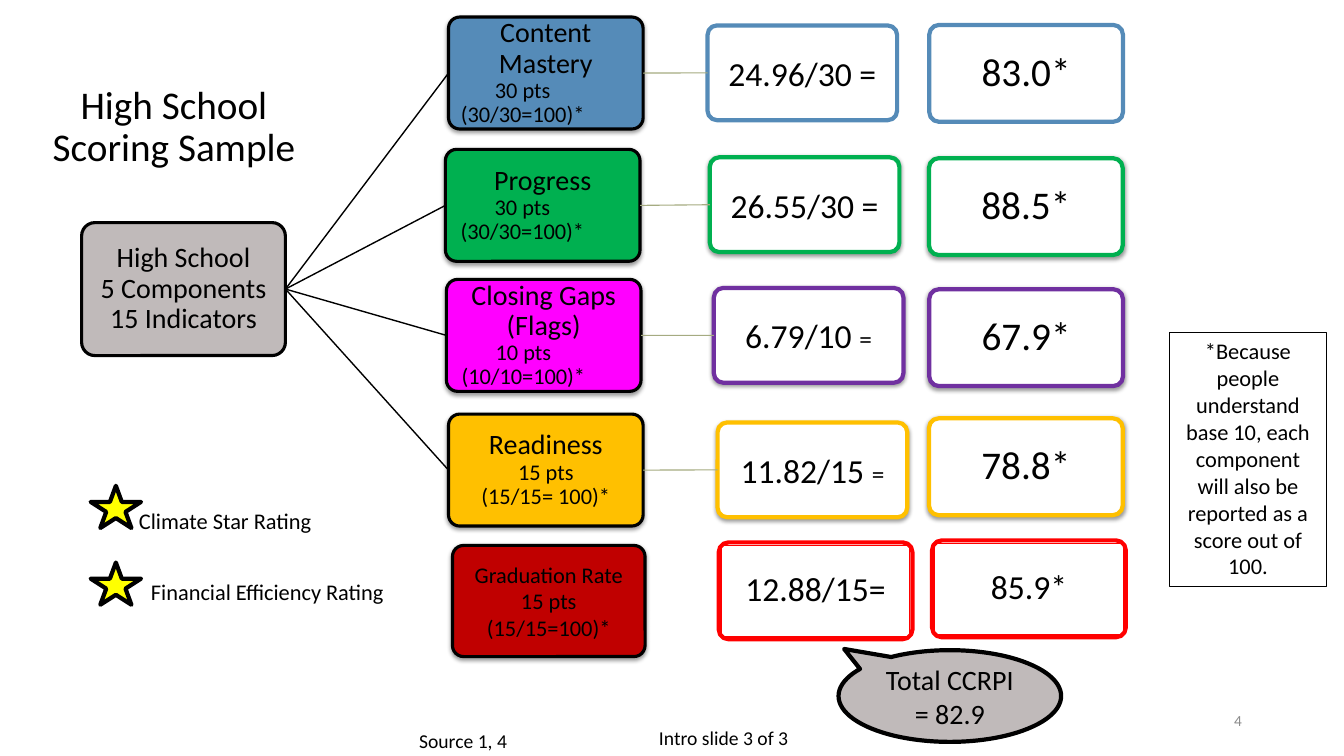
from pptx import Presentation
from pptx import util as u
from pptx.dml import color
from pptx.enum import shapes, text
from pptx.oxml import ns, parse_xml

Pt = u.Pt
FORM = shapes.MSO_SHAPE
MID, TOP = text.MSO_ANCHOR.MIDDLE, text.MSO_ANCHOR.TOP
LEFT, MIDDLE, RIGHT = text.PP_ALIGN.LEFT, text.PP_ALIGN.CENTER, text.PP_ALIGN.RIGHT
SHADE = (
    f'<a:effectLst {ns.nsdecls("a")}><a:outerShdw blurRad="38100" dist="17780" '
    'dir="5400000" rotWithShape="0"><a:srgbClr val="000000"><a:alpha val="40000"/>'
    '</a:srgbClr></a:outerShdw></a:effectLst>'
)
ROWS = [
    dict(top=12.2, fill="558BB8", edge="558BB8", gap=33, shade=False,
         head="Content\vMastery", worth="30 pts", scale="(30/30=100)*",
         points="24.96/30 ", equal=24, score="83.0*",
         card=320.4, mark=(505.4, 18.2), total=(663.8, 17.8)),
    dict(top=106.7, fill="00B050", edge="00B050", gap=29, shade=True,
         head="Progress", worth="30 pts", scale="(30/30=100)*",
         points="26.55/30 ", equal=24, score="88.5*",
         card=318.2, mark=(507, 112.4), total=(663.6, 113)),
    dict(top=199.6, fill="FF00FF", edge="7030A0", gap=29, shade=True,
         head="Closing Gaps\v(Flags)", worth="10 pts", scale="(10/10=100)*",
         points="6.79/10 ", equal=18, score="67.9*",
         card=318.9, mark=(509.9, 205.7), total=(663.8, 206.6)),
    dict(top=295.8, fill="FFC000", edge="FFC000", gap=0, shade=True,
         head="Readiness", worth="15 pts", scale="(15/15= 100)*",
         points="11.82/15 ", equal=18, score="78.8*",
         card=320.4, mark=(512.6, 301.8), total=(663.6, 298.8)),
]


def rgb(code):
    """Turn a hex string into a colour."""
    return color.RGBColor.from_string(code)


def write(shape, lines, align=MIDDLE, anchor=MID, inset=2, space=1.0, ink="000000"):
    """Fill a shape with lines of (text, size)."""
    frame = shape.text_frame
    frame.word_wrap = True
    frame.vertical_anchor = anchor
    frame.margin_left = frame.margin_right = Pt(inset)
    frame.margin_top = frame.margin_bottom = Pt(inset / 2)
    for spot, (words, size) in enumerate(lines):
        para = frame.add_paragraph() if spot else frame.paragraphs[0]
        para.text = words
        para.alignment, para.line_spacing = align, space
        para.font.name, para.font.size = "Calibri", Pt(size)
        para.font.color.rgb = rgb(ink)
    return frame.paragraphs


def label(slide, box, lines, **style):
    """Place plain text in a box."""
    shape = slide.shapes.add_textbox(*map(Pt, box))
    return write(shape, lines, **{"inset": 7.2, **style})


def block(slide, form, box, fill=None, edge="000000", width=3, shade=False):
    """Place a filled and outlined shape in a box."""
    shape = slide.shapes.add_shape(form, *map(Pt, box))
    shape.shadow.inherit = False
    if shade:
        props = shape.element.spPr
        props.replace(props.find(ns.qn("a:effectLst")), parse_xml(SHADE))
    if fill:
        shape.fill.solid()
        shape.fill.fore_color.rgb = rgb(fill)
    else:
        shape.fill.background()
    shape.line.color.rgb = rgb(edge)
    shape.line.width = Pt(width)
    if form == FORM.ROUNDED_RECTANGLE:
        shape.adjustments[0] = 0.1
    return shape


def join(slide, start, end, ink, width):
    """Link the right side of one box to the left side of the next."""
    line = slide.shapes.add_connector(shapes.MSO_CONNECTOR.STRAIGHT, 0, 0, 0, 0)
    line.begin_connect(start, 3)
    line.end_connect(end, 1)
    line.line.color.rgb = rgb(ink)
    line.line.width = Pt(width)
    line.element.spPr.append(parse_xml(f'<a:effectLst {ns.nsdecls("a")}/>'))


def row(slide, root, item):
    """Draw one component with its points and score."""
    form, shade = FORM.ROUNDED_RECTANGLE, item["shade"]
    card = block(slide, form, (item["card"], item["top"], 139, 80),
                 item["fill"], width=2.25, shade=True)
    paras = write(card, [(item["head"], 20), (item["worth"], 16),
                         (item["scale"], 16)], space=0.9, inset=1)
    if item["gap"]:
        paras[1]._p.get_or_add_pPr().set("marR", str(Pt(item["gap"])))
    mark = block(slide, form, (*item["mark"], 135.4, 67.7), "FFFFFF",
                 item["edge"], shade=shade)
    para = write(mark, [(item["points"], 24)])[0]
    sign = para.add_run()
    sign.text = "="
    sign.font.size = Pt(item["equal"])
    total = block(slide, form, (*item["total"], 138.4, 69.2), "FFFFFF",
                  item["edge"], shade=shade)
    write(total, [(item["score"], 28)], space=0.9)
    join(slide, root, card, "000000", 1)
    join(slide, card, mark, "A5AB81", 0.79)


def framed(slide, box, words):
    """Draw a red rounded box with a thin inner frame."""
    left, top, wide, high = box
    block(slide, FORM.ROUNDED_RECTANGLE, box, "FFFFFF", "FF0000")
    inner = block(slide, FORM.RECTANGLE, (left + 2, top + 2, wide - 4, high - 4),
                  edge="FF0000", width=0.75)
    write(inner, [(words, 24)], space=0.9)


def grad(slide, box):
    """Draw the graduation row in its box."""
    left, top = box
    card = block(slide, FORM.ROUNDED_RECTANGLE, (left, top, 137.6, 79.4),
                 "C00000", width=2.25, shade=True)
    write(card, [("Graduation Rate", 16), ("15 pts", 16), ("(15/15=100)*", 16)])
    framed(slide, (left + 190.2, top - 2.2, 138.4, 69.2), "12.88/15=")
    framed(slide, (left + 342.6, top - 3.6, 138.4, 69.2), "85.9*")


def rating(slide, box, shift, words):
    """Draw a star with its label."""
    left, top = box
    block(slide, FORM.STAR_5_POINT, (left, top, 36, 30.2), "FFFF00")
    label(slide, (left + shift[0], top + shift[1], 183, 26.6), [(words, 16)],
          align=LEFT, anchor=TOP, inset=7.2)


def build():
    """Build and save the slide."""
    deck = Presentation()
    deck.slide_width, deck.slide_height = Pt(960), Pt(540)
    slide = deck.slides.add_slide(deck.slide_layouts[6])
    label(slide, (28, 55, 192.4, 73), [("High School\vScoring Sample", 28)], space=0.9)
    root = block(slide, FORM.ROUNDED_RECTANGLE, (58.3, 159, 145.6, 95),
                 "C0BABA", width=2.25)
    write(root, [("High School", 20), ("5 Components", 20), ("15 Indicators", 20)],
          space=0.9)
    for item in ROWS:
        row(slide, root, item)
    grad(slide, (323.2, 389.6))
    rating(slide, (64.8, 347), (27.4, 11.5), "Climate Star Rating")
    rating(slide, (64.8, 401.8), (36, 7.9), "Financial Efficiency Rating")
    call = block(slide, FORM.OVAL_CALLOUT, (599, 464.4, 159, 65.5), "C0BABA")
    call.adjustments[0], call.adjustments[1] = -0.475, -0.513
    write(call, [("Total CCRPI = 82.9", 20)], inset=7.2)
    note = block(slide, FORM.RECTANGLE, (835.2, 237.6, 112.4, 181.4), width=0.25)
    write(note, [("*Because people understand base 10, each component will also "
                  "be reported as a score out of 100.", 16)], anchor=TOP, inset=7.2)
    label(slide, (292.3, 517, 112.3, 24.2), [("Source 1, 4", 14)],
          align=LEFT, anchor=TOP)
    label(slide, (457.9, 514.8, 118, 24.2), [("Intro slide 3 of 3", 14)], anchor=TOP)
    label(slide, (678.2, 500.4, 216, 28.8), [("4", 11)], align=RIGHT, ink="8C8C8C")
    deck.save("out.pptx")


if __name__ == "__main__":
    build()
